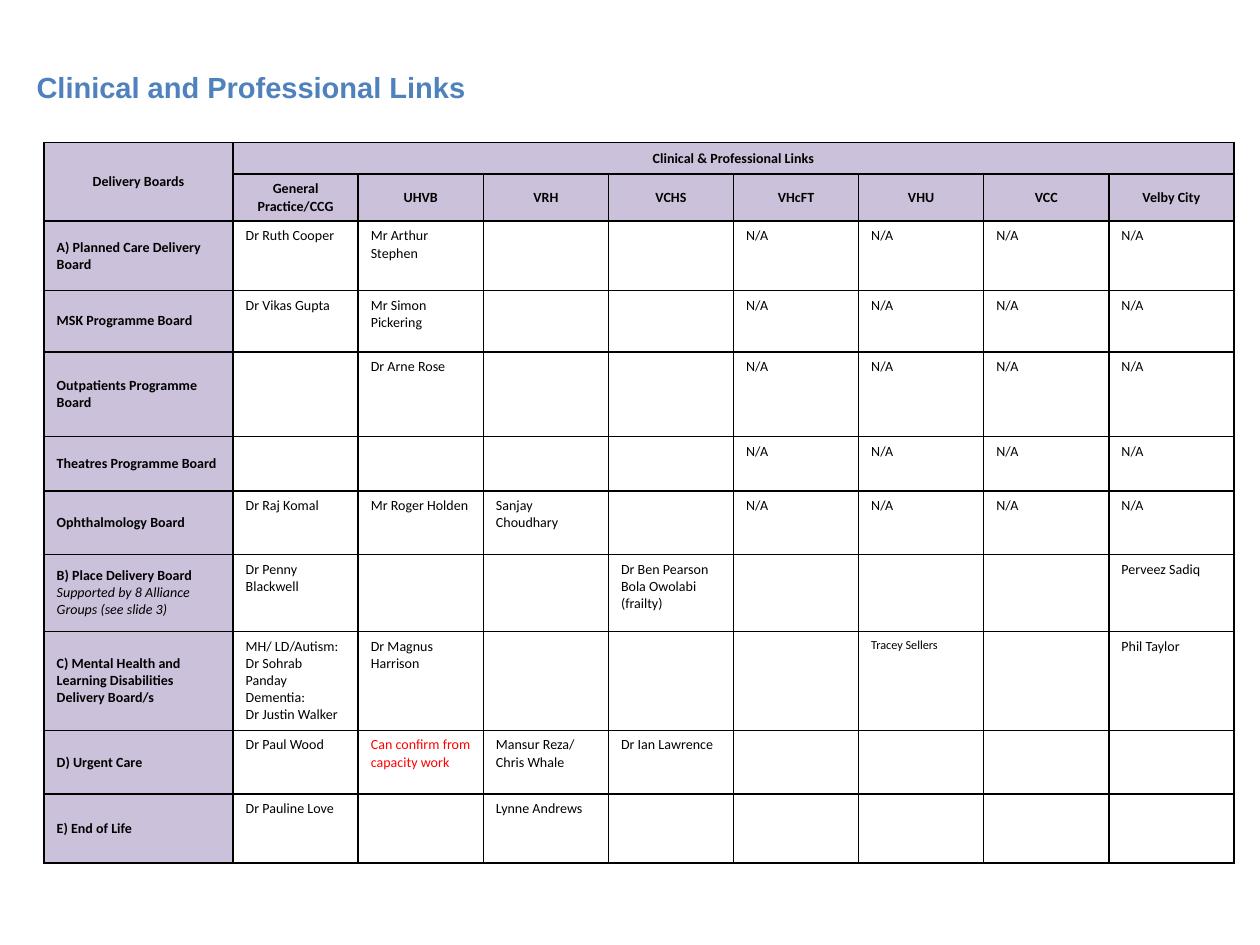
from lxml.etree import SubElement
from pptx import Presentation
from pptx.dml.color import RGBColor
from pptx.enum.text import MSO_ANCHOR, PP_ALIGN
from pptx.oxml.ns import qn
from pptx.util import Pt

COLORS = {"title": "4F81BD", "header": "CCC1DA", "body": "FFFFFF",
          "text": "000000", "alert": "FF0000"}
COLUMN_WIDTHS = [108] + [71.5] * 8
ROW_HEIGHTS = [18, 26.5, 39.5, 35.2, 48.5, 31, 36.3, 44, 56.5, 36.5, 39.5]
NOT_APPLICABLE = ["N/A"] * 4
ROWS = [
    ["Delivery Boards", "Clinical & Professional Links"] + [""] * 7,
    ["", "General Practice/CCG", "UHVB", "VRH", "VCHS", "VHcFT", "VHU", "VCC", "Velby City"],
    ["A) Planned Care Delivery Board", "Dr Ruth Cooper", "Mr Arthur Stephen", "", ""]
    + NOT_APPLICABLE,
    ["MSK Programme Board", "Dr Vikas Gupta", "Mr Simon Pickering", "", ""] + NOT_APPLICABLE,
    ["Outpatients Programme Board", "", "Dr Arne Rose", "", ""] + NOT_APPLICABLE,
    ["Theatres Programme Board", "", "", "", ""] + NOT_APPLICABLE,
    ["Ophthalmology Board", "Dr Raj Komal", "Mr Roger Holden", "Sanjay Choudhary", ""]
    + NOT_APPLICABLE,
    ["B) Place Delivery Board\nSupported by 8 Alliance Groups (see slide 3)",
     "Dr Penny Blackwell", "", "", "Dr Ben Pearson\nBola Owolabi (frailty)",
     "", "", "", "Perveez Sadiq"],
    ["C) Mental Health and Learning Disabilities Delivery Board/s",
     "MH/ LD/Autism:\nDr Sohrab Panday\nDementia:\nDr Justin Walker",
     "Dr Magnus Harrison", "", "", "", "Tracey Sellers", "", "Phil Taylor"],
    ["D) Urgent Care", "Dr Paul Wood", "Can confirm from capacity work",
     "Mansur Reza/ Chris Whale", "Dr Ian Lawrence", "", "", "", ""],
    ["E) End of Life", "Dr Pauline Love", "", "Lynne Andrews", "", "", "", "", ""],
]


def format_font(font, name, size, color, bold):
    font.name = name
    font.size = Pt(size)
    font.color.rgb = RGBColor.from_string(COLORS[color])
    font.bold = bold


def add_borders(cell):
    properties = cell._tc.get_or_add_tcPr()
    for side in ("lnL", "lnR", "lnT", "lnB"):
        line = SubElement(properties, qn(f"a:{side}"), w=str(Pt(1)))
        fill = SubElement(line, qn("a:solidFill"))
        SubElement(fill, qn("a:srgbClr"), val=COLORS["text"])


presentation = Presentation()
presentation.slide_width = Pt(720)
presentation.slide_height = Pt(540)
slide = presentation.slides.add_slide(presentation.slide_layouts[5])

title = slide.shapes.title
title.left, title.top, title.width, title.height = Pt(14.4), Pt(29.5), Pt(544.3), Pt(40.3)
frame = title.text_frame
frame.text = "Clinical and Professional Links"
frame.margin_left = frame.margin_right = Pt(6.5)
frame.vertical_anchor = MSO_ANCHOR.MIDDLE
frame.paragraphs[0].alignment = PP_ALIGN.LEFT
format_font(frame.paragraphs[0].runs[0].font, "Arial", 16.6, "title", True)

table = slide.shapes.add_table(
    len(ROWS), len(COLUMN_WIDTHS), Pt(25.2), Pt(81.5),
    Pt(sum(COLUMN_WIDTHS)), Pt(sum(ROW_HEIGHTS))).table
for column, width in zip(table.columns, COLUMN_WIDTHS):
    column.width = Pt(width)
for row, height in zip(table.rows, ROW_HEIGHTS):
    row.height = Pt(height)

for row_index, texts in enumerate(ROWS):
    for column_index, text in enumerate(texts):
        cell = table.cell(row_index, column_index)
        is_column_header = row_index < 2
        is_header = is_column_header or column_index == 0
        add_borders(cell)
        cell.fill.solid()
        cell.fill.fore_color.rgb = RGBColor.from_string(COLORS["header" if is_header else "body"])
        cell.vertical_anchor = MSO_ANCHOR.MIDDLE if is_header else MSO_ANCHOR.TOP
        cell.text_frame.text = text
        size = 7 if text == "Tracey Sellers" else 8
        color = "alert" if text.startswith("Can confirm") else "text"
        for paragraph in cell.text_frame.paragraphs:
            paragraph.alignment = PP_ALIGN.CENTER if is_column_header else PP_ALIGN.LEFT
            is_note = paragraph.text.startswith("Supported by")
            for run in paragraph.runs:
                format_font(run.font, "Calibri", size, color, is_header and not is_note)
                run.font.italic = is_note
            # Keeps empty cells from stretching their row
            SubElement(paragraph._p, qn("a:endParaRPr"), sz=str(size * 100))

table.cell(0, 0).merge(table.cell(1, 0))
table.cell(0, 1).merge(table.cell(0, 8))

presentation.save("out.pptx")
